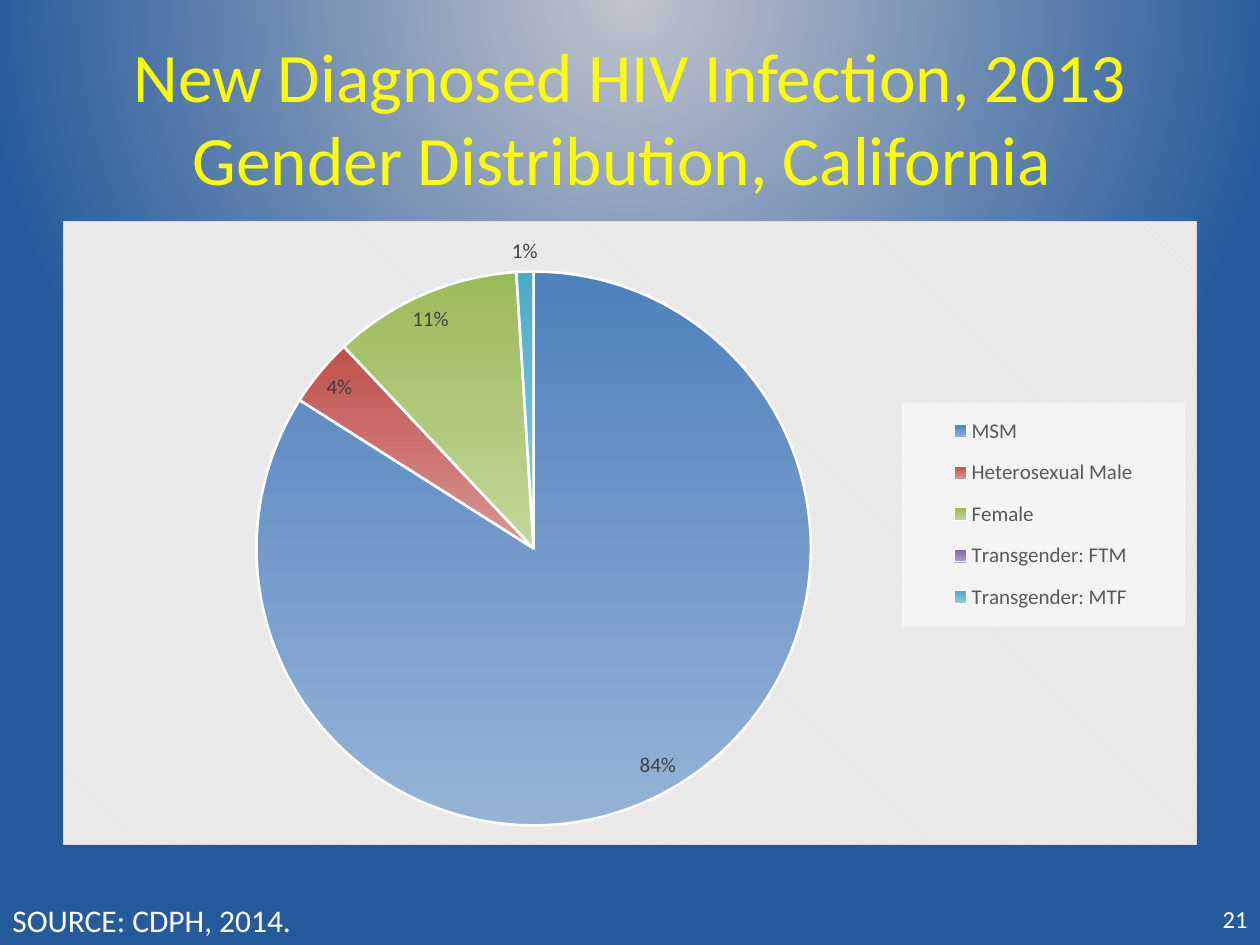
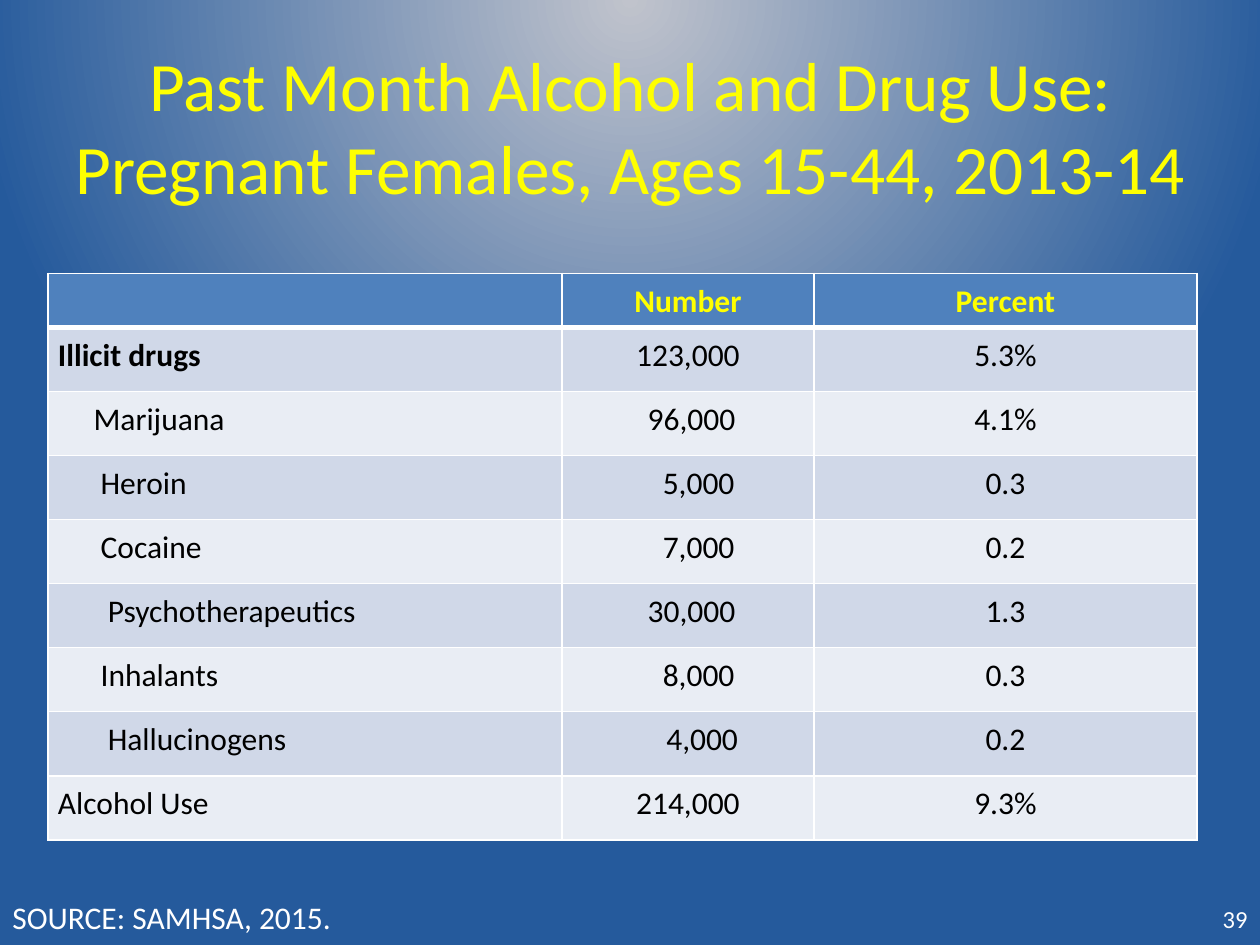
import lxml.etree
import pptx
import pptx.chart.data
import pptx.dml.color
import pptx.enum.chart
import pptx.enum.text
import pptx.oxml
import pptx.oxml.ns
import pptx.util

RGBColor = pptx.dml.color.RGBColor
Pt = pptx.util.Pt
Align = pptx.enum.text.PP_ALIGN
Anchor = pptx.enum.text.MSO_ANCHOR
AutoSize = pptx.enum.text.MSO_AUTO_SIZE
qn = pptx.oxml.ns.qn

FONT = "Calibri"
YELLOW = RGBColor(0xFF, 0xFF, 0x00)
WHITE = RGBColor(0xFF, 0xFF, 0xFF)
BLACK = RGBColor(0x00, 0x00, 0x00)
HEADER_BLUE = RGBColor(0x4F, 0x81, 0xBD)
DARK_BAND = RGBColor(0xD0, 0xD8, 0xE8)
LIGHT_BAND = RGBColor(0xE9, 0xED, 0xF4)
LEGEND_GRAY = RGBColor(0x59, 0x59, 0x59)
LABEL_GRAY = RGBColor(0x40, 0x40, 0x40)
SLICE_GRADIENTS = [
    (RGBColor(0x4F, 0x81, 0xBD), RGBColor(0x95, 0xB3, 0xD7)),
    (RGBColor(0xC0, 0x50, 0x4D), RGBColor(0xD9, 0x96, 0x94)),
    (RGBColor(0x9B, 0xBB, 0x59), RGBColor(0xC3, 0xD6, 0x9B)),
    (RGBColor(0x80, 0x64, 0xA2), RGBColor(0xB3, 0xA2, 0xC7)),
    (RGBColor(0x4B, 0xAC, 0xC6), RGBColor(0x93, 0xCD, 0xDD)),
]
NAMESPACES = pptx.oxml.ns.nsdecls("a", "c")

presentation = pptx.Presentation()
presentation.slide_width = pptx.util.Inches(10)
presentation.slide_height = pptx.util.Inches(7.5)
COLUMN = presentation.slide_width / 100
ROW = presentation.slide_height / 100

TITLE = {"size": Pt(39.6), "name": FONT, "color": YELLOW}
SOURCE = {"size": Pt(18), "name": FONT, "color": WHITE}
NUMBER = {"size": Pt(14), "name": FONT, "color": WHITE}


def apply_font(font, formats):
    for attribute, value in formats.items():
        if attribute == "color":
            font.color.rgb = value
        else:
            setattr(font, attribute, value)


def chart_xml(tag, content):
    return pptx.oxml.parse_xml(f"<c:{tag} {NAMESPACES}>{content}</c:{tag}>")


# Shared background: a glow from above the top edge
background_fill = presentation.slide_master.background.fill
background_fill.gradient()
gradient = next(presentation.slide_master.element.iter(qn("a:gradFill")))
for child in list(gradient):
    gradient.remove(child)
stop_list = lxml.etree.SubElement(gradient, qn("a:gsLst"))
for position, color in [(0, "193D69"), (0, "C0C3CC"), (84, "255A9C")]:
    stop = lxml.etree.SubElement(stop_list, qn("a:gs"), pos=str(position * 1000))
    lxml.etree.SubElement(stop, qn("a:srgbClr"), val=color)
glow = lxml.etree.SubElement(gradient, qn("a:path"), path="circle")
lxml.etree.SubElement(glow, qn("a:fillToRect"), l="50000", t="-80000", r="50000", b="180000")

# Titles, sources and page numbers, with places in columns and rows
slide_texts = [
    ("New Diagnosed HIV Infection, 2013\vGender Distribution, California ", (5, 4, 90, 16.67),
     "SOURCE: CDPH, 2014.", (0, 94.67, 25, 5.33), "21"),
    ("Past Month Alcohol and Drug Use:\vPregnant Females, Ages 15-44, 2013-14", (3.8, 4.93, 92.5, 16.67),
     "SOURCE: SAMHSA, 2015.", (0, 94.4, 27.5, 5.33), "39"),
]
for title, title_place, source, source_place, page in slide_texts:
    slide = presentation.slides.add_slide(presentation.slide_layouts[6])
    boxes = [
        (title, title_place, TITLE, Align.CENTER,
         {"word_wrap": True, "vertical_anchor": Anchor.MIDDLE}),
        (source, source_place, SOURCE, Align.LEFT,
         {"word_wrap": False, "auto_size": AutoSize.SHAPE_TO_FIT_TEXT}),
        (page, (76.7, 94.53, 23.3, 5.33), NUMBER, Align.RIGHT,
         {"word_wrap": True, "vertical_anchor": Anchor.MIDDLE}),
    ]
    for text, (left, top, width, height), font_formats, alignment, frame_formats in boxes:
        shape = slide.shapes.add_textbox(
            int(left * COLUMN), int(top * ROW), int(width * COLUMN), int(height * ROW))
        text_frame = shape.text_frame
        for attribute, value in frame_formats.items():
            setattr(text_frame, attribute, value)
        text_frame.text = text
        paragraph = text_frame.paragraphs[0]
        paragraph.alignment = alignment
        for run in paragraph.runs:
            apply_font(run.font, font_formats)

gender_slide, drug_slide = presentation.slides

# Pie chart of new diagnoses
chart_data = pptx.chart.data.CategoryChartData(number_format="0%")
chart_data.categories = ["MSM", "Heterosexual Male", "Female", "Transgender: FTM", "Transgender: MTF"]
chart_data.add_series("Series 1", [0.84, 0.04, 0.11, 0, 0.01])
chart = gender_slide.shapes.add_chart(
    pptx.enum.chart.XL_CHART_TYPE.PIE,
    int(5 * COLUMN), int(23.4 * ROW), int(90 * COLUMN), int(66 * ROW), chart_data).chart
chart.has_title = False
apply_font(chart.font, {"size": Pt(10), "name": FONT, "color": WHITE})
chart.has_legend = True
chart.legend.position = pptx.enum.chart.XL_LEGEND_POSITION.RIGHT
chart.legend.include_in_layout = False
apply_font(chart.legend.font, {"size": Pt(12), "name": FONT, "color": LEGEND_GRAY})

plot = chart.plots[0]
plot.vary_by_categories = True
pie = plot.series[0]
for index, slice_colors in enumerate(SLICE_GRADIENTS):
    slice_format = pie.points[index].format
    slice_format.fill.gradient()
    slice_format.fill.gradient_angle = 270
    for stop, color in zip(slice_format.fill.gradient_stops, slice_colors):
        stop.color.rgb = color
    slice_format.line.color.rgb = WHITE
    slice_format.line.width = Pt(1.5)

labels = pie.data_labels
label_formats = {
    "show_value": True,
    "show_percentage": False,
    "number_format": "0%",
    "number_format_is_linked": False,
    "position": pptx.enum.chart.XL_LABEL_POSITION.BEST_FIT,
}
for attribute, value in label_formats.items():
    setattr(labels, attribute, value)
apply_font(labels.font, {"size": Pt(12), "name": FONT, "color": LABEL_GRAY})
empty_slice_label = chart_xml("dLbl", '<c:idx val="3"/><c:delete val="1"/>')
next(chart.element.iter(qn("c:dLbls"))).insert(0, empty_slice_label)

# Places of pie and legend, as shares of the chart
plot_area = next(chart.element.iter(qn("c:plotArea")))
legend = next(chart.element.iter(qn("c:legend")))
for parent, index, target, place in [
    (plot_area, 0, '<c:layoutTarget val="inner"/>', (0.17, 0.08, 0.49, 0.89)),
    (legend, 1, "", (0.74, 0.29, 0.25, 0.36)),
]:
    for old_layout in parent.findall(qn("c:layout")):
        parent.remove(old_layout)
    modes = '<c:xMode val="edge"/><c:yMode val="edge"/>'
    sizes = "".join(f'<c:{side} val="{share}"/>' for side, share in zip("xywh", place))
    layout = f"<c:manualLayout>{target}{modes}{sizes}</c:manualLayout>"
    parent.insert(index, chart_xml("layout", layout))

legend.find(qn("c:txPr")).addprevious(chart_xml(
    "spPr",
    '<a:solidFill><a:srgbClr val="FFFFFF"><a:alpha val="50000"/></a:srgbClr></a:solidFill>'))
chart.element.find(qn("c:txPr")).addprevious(chart_xml(
    "spPr",
    '<a:pattFill prst="dkDnDiag"><a:fgClr><a:srgbClr val="FFFFFF"/></a:fgClr>'
    '<a:bgClr><a:srgbClr val="E6E6E6"/></a:bgClr></a:pattFill>'
    '<a:ln w="9525"><a:solidFill><a:srgbClr val="D9D9D9"/></a:solidFill></a:ln>'))

# Table of drug use: label and its indent, number and its indent, percent
INDENT = Pt(4.07)
drug_rows = [
    ("", 0, "Number", 0, "Percent"),
    ("Illicit drugs", 0, "123,000", 0, "5.3%"),
    ("Marijuana", 5, "96,000", 1, "4.1%"),
    ("Heroin", 6, "5,000", 3, "0.3"),
    ("Cocaine", 6, "7,000", 3, "0.2"),
    ("Psychotherapeutics", 7, "30,000", 1, "1.3"),
    ("Inhalants", 6, "8,000", 3, "0.3"),
    ("Hallucinogens", 7, "4,000", 4, "0.2"),
    ("Alcohol Use", 0, "214,000", 0, "9.3%"),
]
table = drug_slide.shapes.add_table(
    len(drug_rows), 3, int(3.8 * COLUMN), int(28.93 * ROW), int(91.2 * COLUMN), int(60 * ROW)).table
table.horz_banding = False
for column, width in zip(table.columns, (40.8, 20, 30.4)):
    column.width = int(width * COLUMN)

for row_index, (label, label_indent, number, number_indent, percent) in enumerate(drug_rows):
    is_header = row_index == 0
    table.rows[row_index].height = int((5.73 if is_header else 6.78) * ROW)
    band = HEADER_BLUE if is_header else (LIGHT_BAND, DARK_BAND)[row_index % 2]
    entries = [(label, label_indent), (number, number_indent), (percent, 0)]
    for column_index, (text, indent) in enumerate(entries):
        cell = table.cell(row_index, column_index)
        cell.margin_left = cell.margin_right = pptx.util.Inches(0.08)
        cell.fill.solid()
        cell.fill.fore_color.rgb = band
        cell.text = text
        paragraph = cell.text_frame.paragraphs[0]
        paragraph.alignment = Align.CENTER if column_index else Align.LEFT
        paragraph.line_spacing = 1.07
        if indent:
            properties = paragraph._p.get_or_add_pPr()
            properties.set("marL", str(int(indent * INDENT)))
            properties.set("indent", "0")
        apply_font(paragraph.font, {
            "size": Pt(18), "name": FONT, "color": YELLOW if is_header else BLACK,
            "bold": is_header or text == "Illicit drugs"})
        for run in paragraph.runs:
            apply_font(run.font, {
                "size": Pt(18), "name": FONT, "color": YELLOW if is_header else BLACK,
                "bold": is_header or text == "Illicit drugs"})
        cell_properties = cell._tc.get_or_add_tcPr()
        for position, side in enumerate("LRTB"):
            is_header_rule = (row_index, side) in [(0, "B"), (1, "T")]
            width = Pt(3 if is_header_rule else 1)
            cell_properties.insert(position, pptx.oxml.parse_xml(
                f'<a:ln{side} {NAMESPACES} w="{width}"><a:solidFill>'
                f'<a:srgbClr val="{WHITE}"/></a:solidFill></a:ln{side}>'))

presentation.save("out.pptx")
